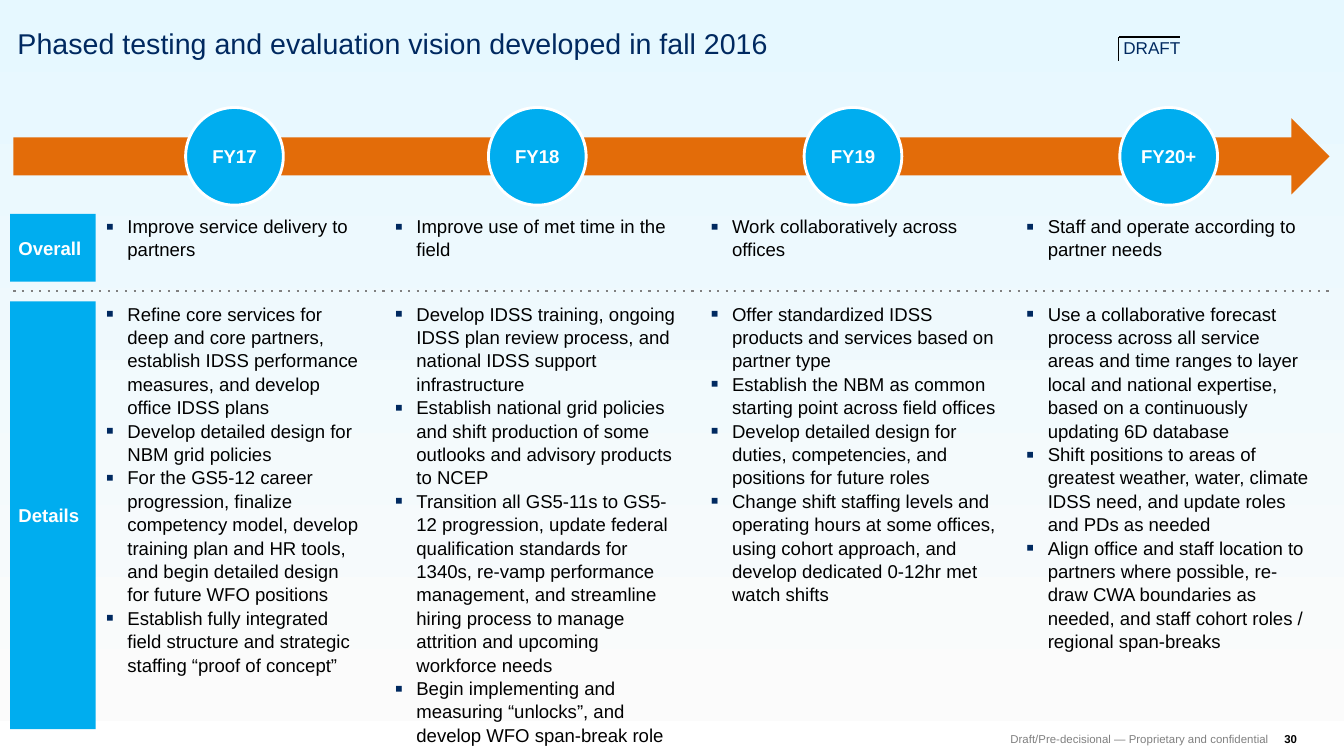
from lxml import etree
from pptx import Presentation
from pptx.dml.color import RGBColor
from pptx.enum import dml, shapes, text
from pptx.oxml.ns import qn
from pptx.util import Inches, Pt

TITLE = "Phased testing and evaluation vision developed in fall 2016"
STAMP = "DRAFT"
FOOTER = "Draft/Pre-decisional — Proprietary and confidential"
PAGE_NUMBER = "30"
PHASES = [
    ("FY17", "Improve service delivery to partners", [
        "Refine core services for deep and core partners, establish IDSS performance measures, "
        "and develop office IDSS plans",
        "Develop detailed design for NBM grid policies",
        "For the GS5-12 career progression, finalize competency model, develop training plan "
        "and HR tools, and begin detailed design for future WFO positions",
        "Establish fully integrated field structure and strategic staffing “proof of concept”",
    ]),
    ("FY18", "Improve use of met time in the field", [
        "Develop IDSS training, ongoing IDSS plan review process, and national IDSS support "
        "infrastructure",
        "Establish national grid policies and shift production of some outlooks and advisory "
        "products to NCEP",
        "Transition all GS5-11s to GS5-12 progression, update federal qualification standards "
        "for 1340s, re-vamp performance management, and streamline hiring process to manage "
        "attrition and upcoming workforce needs",
        "Begin implementing and measuring “unlocks”, and develop WFO span-break role",
    ]),
    ("FY19", "Work collaboratively across offices", [
        "Offer standardized IDSS products and services based on partner type",
        "Establish the NBM as common starting point across field offices",
        "Develop detailed design for duties, competencies, and positions for future roles",
        "Change shift staffing levels and operating hours at some offices, using cohort "
        "approach, and develop dedicated 0-12hr met watch shifts",
    ]),
    ("FY20+", "Staff and operate according to partner needs", [
        "Use a collaborative forecast process across all service areas and time ranges to layer "
        "local and national expertise, based on a continuously updating 6D database",
        "Shift positions to areas of greatest weather, water, climate IDSS need, and update "
        "roles and PDs as needed",
        "Align office and staff location to partners where possible, re-draw CWA boundaries as "
        "needed, and staff cohort roles / regional span-breaks",
    ]),
]

NAVY = RGBColor(0x00, 0x29, 0x60)
BLUE = RGBColor(0x00, 0xAD, 0xEF)
ORANGE = RGBColor(0xE3, 0x6C, 0x09)
GRAY = RGBColor(0x80, 0x80, 0x80)
BLACK = RGBColor(0, 0, 0)
WHITE = RGBColor(0xFF, 0xFF, 0xFF)
PALE_GRAY = RGBColor(0xFB, 0xFB, 0xFB)
PALE_BLUE = RGBColor(0xE6, 0xF8, 0xFF)

WIDTH, HEIGHT = 13.07, 7.35
MARGIN = 0.13
FIRST_LEFT, FIRST_WIDTH = 1.03, 2.5
SECOND_LEFT, COLUMN_WIDTH, COLUMN_STEP = 3.84, 2.77, 3.07
COLUMNS = [(FIRST_LEFT, FIRST_WIDTH)] + [
    (SECOND_LEFT + i * COLUMN_STEP, COLUMN_WIDTH) for i in range(3)]
ARROW_TOP, ARROW_HEIGHT, CIRCLE = 1.15, 0.74, 0.95
LABEL_LEFT, LABEL_WIDTH = 0.1, 0.83
OVERALL_TOP, OVERALL_HEIGHT = 2.08, 0.66
DETAILS_TOP, DETAILS_HEIGHT = 2.93, 4.16
DIVIDER_TOP = 2.83
STAMP_LEFT, STAMP_TOP, STAMP_WIDTH, STAMP_HEIGHT = 10.88, 0.36, 0.6, 0.23
FOOTER_TOP, FOOTER_HEIGHT = 7.12, 0.13
BODY_SIZE = 13

presentation = Presentation()
presentation.slide_width, presentation.slide_height = Inches(WIDTH), Inches(HEIGHT)
slide = presentation.slides.add_slide(presentation.slide_layouts[5])


def write(shape, lines, size, color, bold=False, align=text.PP_ALIGN.LEFT,
          anchor=text.MSO_ANCHOR.TOP, inset=0, wrap=True, bullets=False):
    frame = shape.text_frame
    frame.text = "\n".join(lines)
    frame.word_wrap, frame.vertical_anchor = wrap, anchor
    frame.auto_size = text.MSO_AUTO_SIZE.NONE
    frame.margin_left = frame.margin_right = Inches(inset)
    frame.margin_top = frame.margin_bottom = Inches(inset)
    for paragraph in frame.paragraphs:
        paragraph.alignment = align
        if bullets:
            add_bullet(paragraph)
        for run in paragraph.runs:
            run.font.name, run.font.size, run.font.bold = "Arial", Pt(size), bold
            run.font.color.rgb = color


def add_bullet(paragraph):
    paragraph.line_spacing = 1.05
    properties = paragraph._p.get_or_add_pPr()
    properties.set("marL", str(Inches(0.21)))
    properties.set("indent", str(-Inches(0.21)))
    color = etree.SubElement(properties, qn("a:buClr"))
    etree.SubElement(color, qn("a:srgbClr"), val=str(NAVY))
    etree.SubElement(properties, qn("a:buSzPct"), val="125000")
    etree.SubElement(properties, qn("a:buFont"), typeface="Arial")
    etree.SubElement(properties, qn("a:buChar"), char="▪")


def add_text(left, top, width, height, lines, size, color, **options):
    box = slide.shapes.add_textbox(Inches(left), Inches(top), Inches(width), Inches(height))
    write(box, lines, size, color, **options)


def add_block(kind, left, top, width, height, color):
    """Add a plain preset shape without outline or shadow."""
    shape = slide.shapes.add_shape(
        kind, Inches(left), Inches(top), Inches(width), Inches(height))
    shape.shadow.inherit = False
    shape.fill.solid()
    shape.fill.fore_color.rgb = color
    shape.line.fill.background()
    return shape


def add_line(x1, y1, x2, y2, color, weight):
    line = slide.shapes.add_connector(
        shapes.MSO_CONNECTOR.STRAIGHT, Inches(x1), Inches(y1), Inches(x2), Inches(y2))
    line.line.color.rgb, line.line.width = color, Pt(weight)
    etree.SubElement(line._element.spPr, qn("a:effectLst"))
    return line


RECTANGLE = shapes.MSO_SHAPE.RECTANGLE
MIDDLE = text.MSO_ANCHOR.MIDDLE
RIGHT = text.PP_ALIGN.RIGHT

backdrop = add_block(RECTANGLE, 0, 0, WIDTH, 7.01, PALE_GRAY)
backdrop.fill.gradient()
backdrop.fill.gradient_angle = 90
for stop, position, color in zip(backdrop.fill.gradient_stops, (0, 1), (PALE_GRAY, PALE_BLUE)):
    stop.position, stop.color.rgb = position, color

title = slide.shapes.title
title.left, title.top = Inches(0.17), Inches(0.25)
title.width, title.height = Inches(12.57), Inches(0.34)
write(title, [TITLE], 20, NAVY)
slide.shapes._spTree.append(title._element)  # in front of the backdrop

add_text(STAMP_LEFT, STAMP_TOP, STAMP_WIDTH, STAMP_HEIGHT, [STAMP], 12, NAVY,
         align=RIGHT, wrap=False)
add_line(STAMP_LEFT, STAMP_TOP, STAMP_LEFT + STAMP_WIDTH, STAMP_TOP, BLACK, 1.5)
add_line(STAMP_LEFT, STAMP_TOP, STAMP_LEFT, STAMP_TOP + STAMP_HEIGHT, BLACK, 0.75)

add_block(shapes.MSO_SHAPE.RIGHT_ARROW, MARGIN, ARROW_TOP, 12.8, ARROW_HEIGHT, ORANGE)
divider = add_line(MARGIN, DIVIDER_TOP, WIDTH - MARGIN, DIVIDER_TOP, GRAY, 1.5)
divider.line.dash_style = dml.MSO_LINE.ROUND_DOT
next(divider._element.iter(qn("a:prstDash"))).set("val", "dot")

for label, top, height in [("Overall", OVERALL_TOP, OVERALL_HEIGHT),
                           ("Details", DETAILS_TOP, DETAILS_HEIGHT)]:
    block = add_block(RECTANGLE, LABEL_LEFT, top, LABEL_WIDTH, height, BLUE)
    write(block, [label], BODY_SIZE, WHITE, bold=True, anchor=MIDDLE, inset=0.08)

circle_top = ARROW_TOP + (ARROW_HEIGHT - CIRCLE) / 2
for (left, width), (year, overall, details) in zip(COLUMNS, PHASES):
    circle = add_block(shapes.MSO_SHAPE.OVAL, left + (width - CIRCLE) / 2, circle_top,
                       CIRCLE, CIRCLE, BLUE)
    circle.line.color.rgb, circle.line.width = WHITE, Pt(2)
    write(circle, [year], BODY_SIZE, WHITE, bold=True,
          align=text.PP_ALIGN.CENTER, anchor=MIDDLE)
    add_text(left, OVERALL_TOP, width, 0.44, [overall], BODY_SIZE, BLACK, bullets=True)
    add_text(left, DETAILS_TOP, width, DETAILS_HEIGHT, details, BODY_SIZE, BLACK, bullets=True)

add_text(9.83, FOOTER_TOP, 2.51, FOOTER_HEIGHT, [FOOTER], 8, GRAY,
         align=RIGHT, anchor=MIDDLE, wrap=False)
add_text(12.49, FOOTER_TOP, 0.14, FOOTER_HEIGHT, [PAGE_NUMBER], 8, BLACK,
         bold=True, anchor=MIDDLE, wrap=False)

presentation.save("out.pptx")
